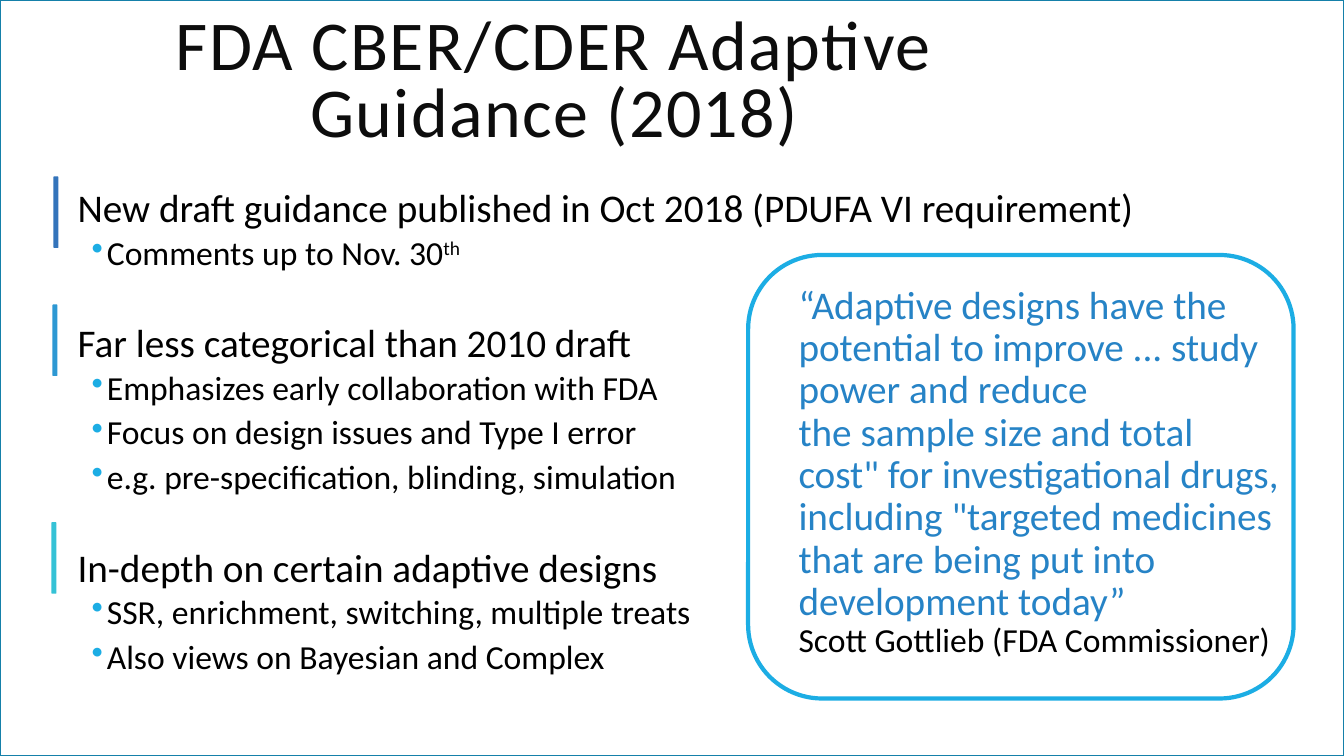
from lxml import etree
from pptx import Presentation
from pptx.dml.color import RGBColor
from pptx.enum.shapes import MSO_SHAPE
from pptx.enum.text import MSO_ANCHOR, PP_ALIGN
from pptx.oxml.ns import qn
from pptx.util import Inches, Pt

RECT, ROUND = MSO_SHAPE.RECTANGLE, MSO_SHAPE.ROUNDED_RECTANGLE
TOP, MIDDLE = MSO_ANCHOR.TOP, MSO_ANCHOR.MIDDLE
LEFT, CENTER = PP_ALIGN.LEFT, PP_ALIGN.CENTER

FRAME = RGBColor(0x15, 0x80, 0xA9)
ACCENT = RGBColor(0x1C, 0xAD, 0xE4)
QUOTE = RGBColor(0x26, 0x83, 0xC6)
INK = RGBColor(0x0D, 0x0D, 0x0D)
BLACK = RGBColor(0, 0, 0)
FONT = "Calibri"

HEAD = {"line_spacing": 1.5, "space_before": Pt(12), "space_after": Pt(2)}
FIRST = HEAD | {"line_spacing": 0.9, "space_before": Pt(0)}
ITEM = {"level": 1, "line_spacing": 0.9, "space_before": Pt(2), "space_after": Pt(4)}

TOPICS = [
    ("New draft guidance published in Oct 2018 (PDUFA VI requirement)",
     ["Comments up to Nov. 30"]),
    ("Far less categorical than 2010 draft",
     ["Emphasizes early collaboration with FDA",
      "Focus on design issues and Type I error",
      "e.g. pre-specification, blinding, simulation"]),
    ("In-depth on certain adaptive designs",
     ["SSR, enrichment, switching, multiple treats",
      "Also views on Bayesian and Complex"]),
]
SAYING = [
    "“Adaptive designs have the potential to improve ... study power and reduce",
    "the sample size and total cost\" for investigational drugs, including "
    "\"targeted medicines that are being put into development today”",
]
BARS = [
    (0.53, 1.75, RGBColor(0x34, 0x74, 0xBB)),
    (0.52, 3.02, RGBColor(0x2D, 0x98, 0xD3)),
    (0.51, 5.18, RGBColor(0x35, 0xC2, 0xD6)),
]


def apply(target, form):
    for name, value in form.items():
        setattr(target, name, value)


def add_shape(slide, kind, box, fill=None, line=None, width=0):
    shape = slide.shapes.add_shape(kind, *map(Inches, box))
    shape.shadow.inherit = False
    if fill is None:
        shape.fill.background()
    else:
        shape.fill.solid()
        shape.fill.fore_color.rgb = fill
    if line is None:
        shape.line.fill.background()
    else:
        shape.line.color.rgb = line
        shape.line.width = Pt(width)


def add_box(slide, box, pads, anchor=TOP):
    """Add a wrapping text box; pads are left, top, right and bottom."""
    frame = slide.shapes.add_textbox(*map(Inches, box)).text_frame
    sides = ("margin_left", "margin_top", "margin_right", "margin_bottom")
    apply(frame, dict(zip(sides, map(Inches, pads))))
    apply(frame, {"word_wrap": True, "vertical_anchor": anchor})
    return frame


def add_run(para, text, size, color=BLACK):
    run = para.add_run()
    run.text = text
    apply(run.font, {"name": FONT, "size": Pt(size)})
    run.font.color.rgb = color
    return run


def add_bullet(para):
    props = para._p.get_or_add_pPr()
    props.set("marL", str(Inches(0.29)))
    props.set("indent", str(Inches(-0.15)))
    tint = etree.SubElement(props, qn("a:buClr"))
    etree.SubElement(tint, qn("a:srgbClr"), val=str(ACCENT))
    etree.SubElement(props, qn("a:buChar"), char="•")


def add_title(slide):
    frame = add_box(slide, (0.51, 0.01, 9.98, 1.64), (0.1, 0.05, 0.1, 0.05), MIDDLE)
    para = frame.paragraphs[0]
    apply(para, {"alignment": CENTER, "line_spacing": 0.8})
    run = add_run(para, "FDA CBER/CDER Adaptive Guidance (2018)", 50, INK)
    run.font._element.set("spc", "100")


def add_topics(slide):
    frame = add_box(slide, (0.72, 1.82, 10.63, 4.4), [0.05] * 4)
    for index, (head, items) in enumerate(TOPICS):
        para = frame.add_paragraph() if index else frame.paragraphs[0]
        apply(para, HEAD if index else FIRST)
        add_run(para, head, 28)
        for item in items:
            para = frame.add_paragraph()
            add_bullet(para)
            apply(para, ITEM)
            add_run(para, item, 24)
            if item.endswith("30"):
                add_run(para, "th", 24).font._element.set("baseline", "30000")


def add_quote(slide):
    frame = add_box(slide, (7.77, 2.78, 4.97, 3.89), (0.15, 0.05, 0.05, 0.05))
    para = frame.paragraphs[0]
    apply(para, {"alignment": LEFT, "line_spacing": 0.9, "space_after": Pt(2)})
    for part in SAYING:
        add_run(para, part, 28, QUOTE)
        para.add_line_break()
    add_run(para, "Scott Gottlieb (FDA Commissioner)", 24)
    add_shape(slide, ROUND, (7.42, 2.53, 5.41, 4.4), line=ACCENT, width=3)


def main():
    deck = Presentation()
    apply(deck, {"slide_width": Inches(13.33), "slide_height": Inches(7.5)})
    slide = deck.slides.add_slide(deck.slide_layouts[6])
    add_shape(slide, RECT, (0, 0, 13.33, 7.5), line=FRAME, width=1.25)
    add_title(slide)
    add_topics(slide)
    add_quote(slide)
    for left, top, color in BARS:
        add_shape(slide, ROUND, (left, top, 0.05, 0.71), fill=color)
    deck.save("out.pptx")


if __name__ == "__main__":
    main()
